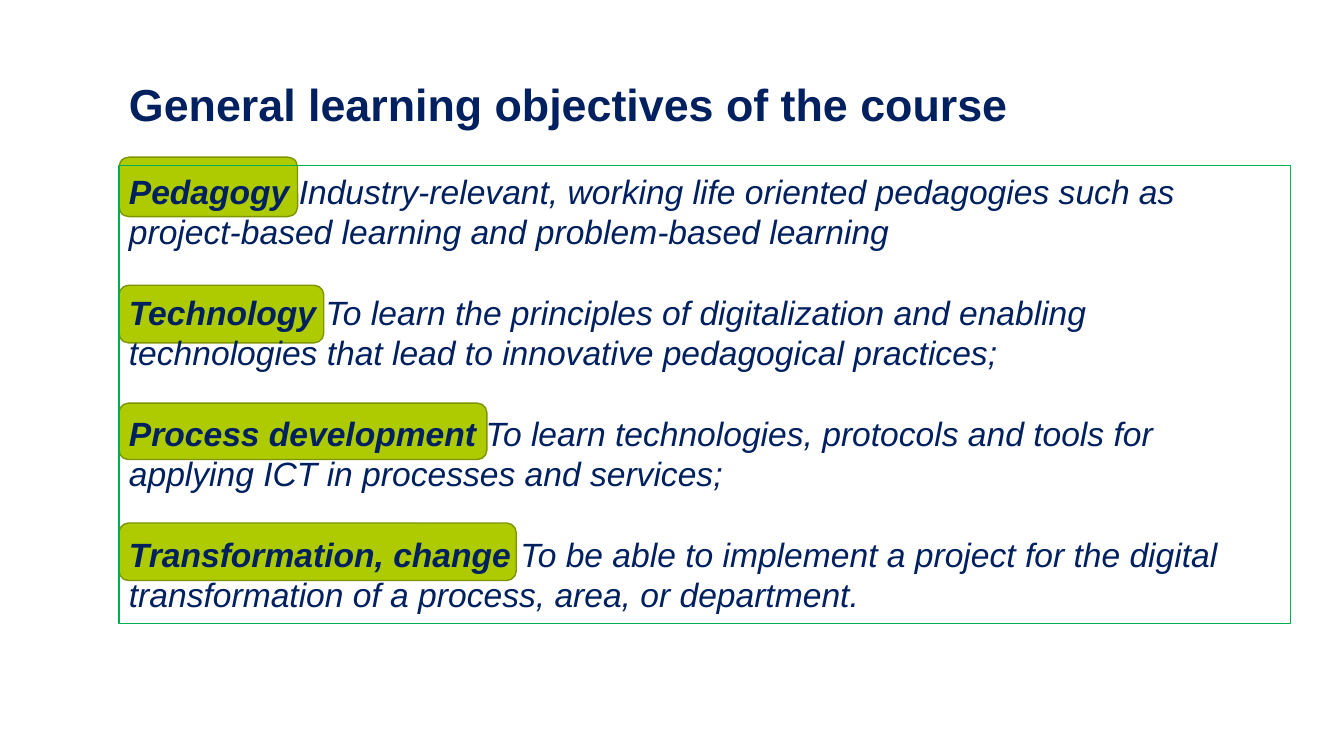
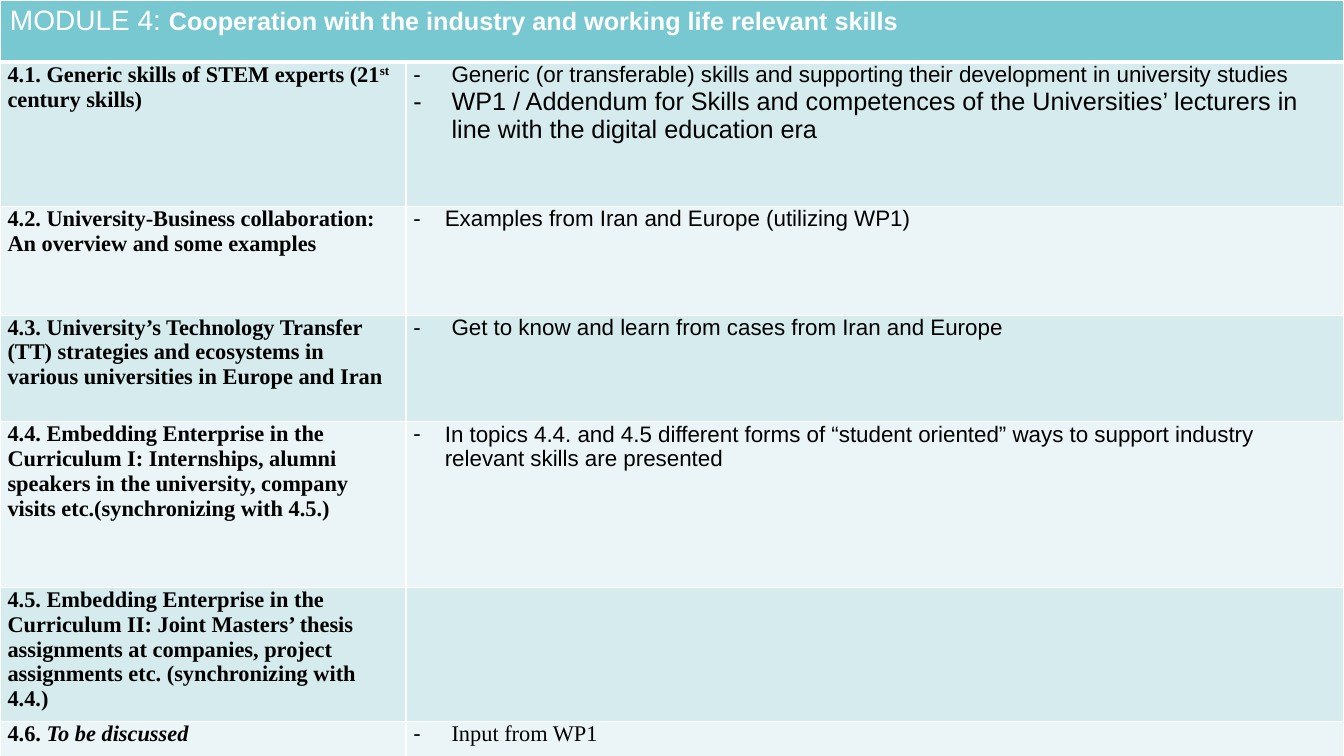
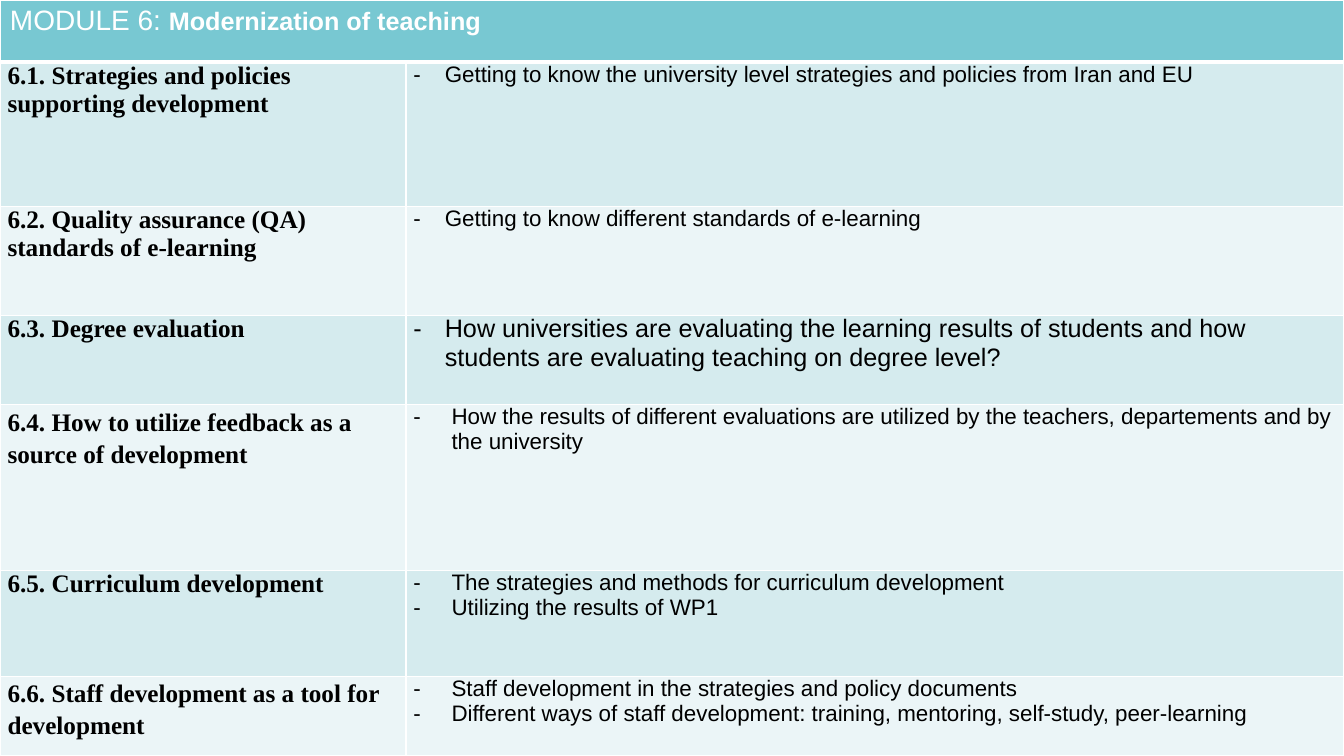
from dataclasses import dataclass

from lxml import etree
from pptx import Presentation
from pptx.dml.color import RGBColor
from pptx.enum.shapes import MSO_SHAPE
from pptx.enum.text import MSO_ANCHOR, PP_ALIGN
from pptx.oxml.ns import qn
from pptx.util import Cm, Pt

RECT = MSO_SHAPE.RECTANGLE
ROUND = MSO_SHAPE.ROUNDED_RECTANGLE
TOP = MSO_ANCHOR.TOP
BOTTOM = MSO_ANCHOR.BOTTOM
LEFT = PP_ALIGN.LEFT


@dataclass(frozen=True)
class Theme:
    navy: str = "002060"
    lime: str = "ADCB00"
    olive: str = "7E9400"
    green: str = "00B050"
    teal: str = "78C8D2"
    bands: tuple[str, str] = ("D5EBEE", "EBF5F7")
    white: str = "FFFFFF"
    black: str = "000000"
    sans: str = "Arial"
    serif: str = "Times New Roman"
    title: int = 32
    body: int = 24
    module: int = 20
    large: int = 18
    small: int = 16


THEME = Theme()
WIDTH, HEIGHT = 33.87, 19.05
COLS = (10.23, 23.64)
HEAD = 1.57
EDGE = 3.0
PAD = (0.25, 0.13, 0.25, 0.13)
SLIM = (0.19, 0, 0.19, 0)
NEAR, FAR = 0.79, 0.96


@dataclass(frozen=True)
class Goal:
    name: str
    text: str
    top: float
    width: float
    height: float


@dataclass(frozen=True)
class Span:
    text: str
    slant: bool | None = None
    raised: bool = False


@dataclass(frozen=True)
class Point:
    text: str
    indent: float = FAR
    size: int = THEME.small
    face: str = THEME.sans


@dataclass(frozen=True)
class Topic:
    height: float
    spans: tuple[Span, ...]
    points: tuple[Point, ...] = ()
    lead: float | None = None


@dataclass(frozen=True)
class Module:
    label: str
    name: str
    size: int
    topics: tuple[Topic, ...]


GOALS = (
    Goal("Pedagogy", "Industry-relevant, working life oriented pedagogies such as "
         "project-based learning and problem-based learning", 3.96, 4.5, 1.5),
    Goal("Technology", "To learn the principles of digitalization and enabling "
         "technologies that lead to innovative pedagogical practices;", 7.19, 5.16, 1.45),
    Goal("Process development", "To learn technologies, protocols and tools for "
         "applying ICT in processes and services;", 10.16, 9.27, 1.42),
    Goal("Transformation, change", "To be able to implement a project for the digital "
         "transformation of a process, area, or department.", 13.18, 10.01, 1.45),
)

MODULES = (
    Module("MODULE 4: ", "Cooperation with the industry and working life relevant skills",
           THEME.small, (
        Topic(3.63, (Span("4.1. Generic skills of STEM experts (21"),
                     Span("st", raised=True), Span(" century skills)")), (
            Point("Generic (or transferable) skills and supporting their development "
                  "in university studies"),
            Point("WP1 / Addendum for Skills and competences of the Universities’ "
                  "lecturers in line with the digital education era", size=THEME.large))),
        Topic(2.74, (Span("4.2. University-Business collaboration: An overview and "
                          "some examples"),),
              (Point("Examples from Iran and Europe (utilizing WP1)", NEAR),)),
        Topic(2.69, (Span("4.3. University’s Technology Transfer (TT) strategies and "
                          "ecosystems in various universities in Europe and Iran"),),
              (Point("Get to know and learn from cases from Iran and Europe"),)),
        Topic(4.17, (Span("4.4. Embedding Enterprise in the Curriculum I: Internships, "
                          "alumni speakers in the university, company visits "
                          "etc.(synchronizing with 4.5.)"),),
              (Point("In topics 4.4. and 4.5 different forms of “student oriented” ways "
                     "to support industry relevant skills are presented", NEAR),)),
        Topic(3.38, (Span("4.5. Embedding Enterprise in the Curriculum II: Joint "
                          "Masters’ thesis assignments at companies, project assignments "
                          "etc. (synchronizing with 4.4.)"),)),
        Topic(0.87, (Span("4.6. "), Span("To be discussed", slant=True)),
              (Point("Input from WP1", face=THEME.serif),)),
    )),
    Module("MODULE 6: ", "Modernization of teaching", THEME.large, (
        Topic(3.63, (Span("6.1. Strategies and policies supporting development"),),
              (Point("Getting to know the university level strategies and policies "
                     "from Iran and EU", NEAR),)),
        Topic(2.74, (Span("6.2. Quality assurance (QA) standards of e-learning"),),
              (Point("Getting to know different standards of e-learning", NEAR),)),
        Topic(2.26, (Span("6.3. Degree evaluation"),),
              (Point("How universities are evaluating the learning results of students "
                     "and how students are evaluating teaching on degree level?",
                     NEAR, THEME.large),)),
        Topic(4.17, (Span("6.4. How to utilize feedback as a source of development"),),
              (Point("How the results of different evaluations are utilized by the "
                     "teachers, departements and by the university"),), 1.15),
        Topic(2.67, (Span("6.5. Curriculum development"),), (
            Point("The strategies and methods for curriculum development"),
            Point("Utilizing the results of WP1"))),
        Topic(2.01, (Span("6.6. Staff development as a tool for development"),), (
            Point("Staff development in the strategies and policy documents"),
            Point("Different ways of staff development: training, mentoring, "
                  "self-study, peer-learning")), 1.15),
    )),
)


def tint(fill, color: str) -> None:
    fill.solid()
    fill.fore_color.rgb = RGBColor.from_string(color)


def style(font, face: str, color: str, size: int | None = None,
          bold: bool | None = None, slant: bool | None = None) -> None:
    font.name = face
    font.color.rgb = RGBColor.from_string(color)
    font.bold = bold
    font.italic = slant
    if size:
        font.size = Pt(size)


def inset(box, pads: tuple[float, ...]) -> None:
    box.margin_left, box.margin_top, box.margin_right, box.margin_bottom = map(Cm, pads)


def add_run(para, text: str):
    run = para.add_run()
    run.text = text
    return run


def add_box(slide, kind, area: tuple[float, ...], line: str, weight: float,
            fill: str | None = None):
    box = slide.shapes.add_shape(kind, *map(Cm, area))
    box.shadow.inherit = False
    if fill:
        tint(box.fill, fill)
    else:
        box.fill.background()
    box.line.color.rgb = RGBColor.from_string(line)
    box.line.width = Pt(weight)
    return box


def add_title(slide, text: str) -> None:
    frame = slide.shapes.add_textbox(*map(Cm, (EDGE, 1.22, 23.57, 3.48))).text_frame
    frame.word_wrap = True
    frame.vertical_anchor = BOTTOM
    inset(frame, (0.25, 0.13, 0.25, 1.67))
    para = frame.paragraphs[0]
    para.line_spacing = 0.9
    style(para.font, THEME.sans, THEME.navy, THEME.title, True)
    add_run(para, text)


def add_goals(slide) -> None:
    for goal in GOALS:
        add_box(slide, ROUND, (EDGE, goal.top, goal.width, goal.height),
                THEME.olive, 1, THEME.lime)
    add_title(slide, "General learning objectives of the course")
    frame = add_box(slide, RECT, (EDGE, 4.18, 29.52, 11.54), THEME.green, 0.75).text_frame
    frame.word_wrap = True
    frame.vertical_anchor = TOP
    inset(frame, PAD)
    for index, goal in enumerate(GOALS):
        para = frame.add_paragraph() if index else frame.paragraphs[0]
        para.alignment = LEFT
        if index:
            para.space_before = Pt(28.8)
        style(para.font, THEME.sans, THEME.navy, THEME.body, slant=True)
        add_run(para, goal.name + " ").font.bold = True
        add_run(para, goal.text)


def add_dash(para, indent: float) -> None:
    props = para._p.get_or_add_pPr()
    props.set("marL", str(Cm(indent)))
    props.set("indent", str(-Cm(indent)))
    color = etree.SubElement(props, qn("a:buClr"))
    etree.SubElement(color, qn("a:srgbClr"), val=THEME.black)
    etree.SubElement(props, qn("a:buFont"), typeface=THEME.sans)
    etree.SubElement(props, qn("a:buChar"), char="-")


def dress(cell, fill: str, pads: tuple[float, ...], base: float = 1) -> None:
    inset(cell, pads)
    cell.vertical_anchor = TOP
    props = cell._tc.get_or_add_tcPr()
    for side, weight in (("L", 1), ("R", 1), ("T", 1), ("B", base)):
        line = etree.SubElement(props, qn("a:ln" + side), w=str(Pt(weight)))
        solid = etree.SubElement(line, qn("a:solidFill"))
        etree.SubElement(solid, qn("a:srgbClr"), val=THEME.white)
    tint(cell.fill, fill)


def fill_topic(cell, topic: Topic, size: int) -> None:
    para = cell.text_frame.paragraphs[0]
    if topic.lead:
        para.line_spacing = topic.lead
    style(para.font, THEME.serif, THEME.black, size, True)
    for span in topic.spans:
        run = add_run(para, span.text)
        run.font.italic = span.slant
        if span.raised:
            run._r.get_or_add_rPr().set("baseline", "30000")


def fill_points(cell, points: tuple[Point, ...]) -> None:
    frame = cell.text_frame
    for index, point in enumerate(points):
        para = frame.add_paragraph() if index else frame.paragraphs[0]
        add_dash(para, point.indent)
        style(para.font, point.face, THEME.black, point.size, False)
        add_run(para, point.text)


def add_module(slide, module: Module) -> None:
    count = len(module.topics) + 1
    table = slide.shapes.add_table(count, len(COLS), 0, 0, Cm(WIDTH), Cm(HEIGHT)).table
    for column, width in zip(table.columns, COLS):
        column.width = Cm(width)
    heights = (HEAD, *(topic.height for topic in module.topics))
    for row, height in zip(table.rows, heights):
        row.height = Cm(height)

    for cell in table.rows[0].cells:
        dress(cell, THEME.teal, PAD, 3)
    head = table.cell(0, 0)
    head.merge(table.cell(0, 1))
    para = head.text_frame.paragraphs[0]
    style(para.font, THEME.sans, THEME.white)
    for text, size, bold in ((module.label, THEME.module, False),
                             (module.name, THEME.large, True)):
        font = add_run(para, text).font
        font.size = Pt(size)
        font.bold = bold

    for index, topic in enumerate(module.topics):
        left, right = table.rows[index + 1].cells
        for cell in (left, right):
            dress(cell, THEME.bands[index % 2], SLIM)
        fill_topic(left, topic, module.size)
        fill_points(right, topic.points)


def main() -> None:
    deck = Presentation()
    deck.slide_width, deck.slide_height = Cm(WIDTH), Cm(HEIGHT)
    blank = deck.slide_layouts[6]
    add_goals(deck.slides.add_slide(blank))
    for module in MODULES:
        add_module(deck.slides.add_slide(blank), module)
    deck.save("out.pptx")


if __name__ == "__main__":
    main()
